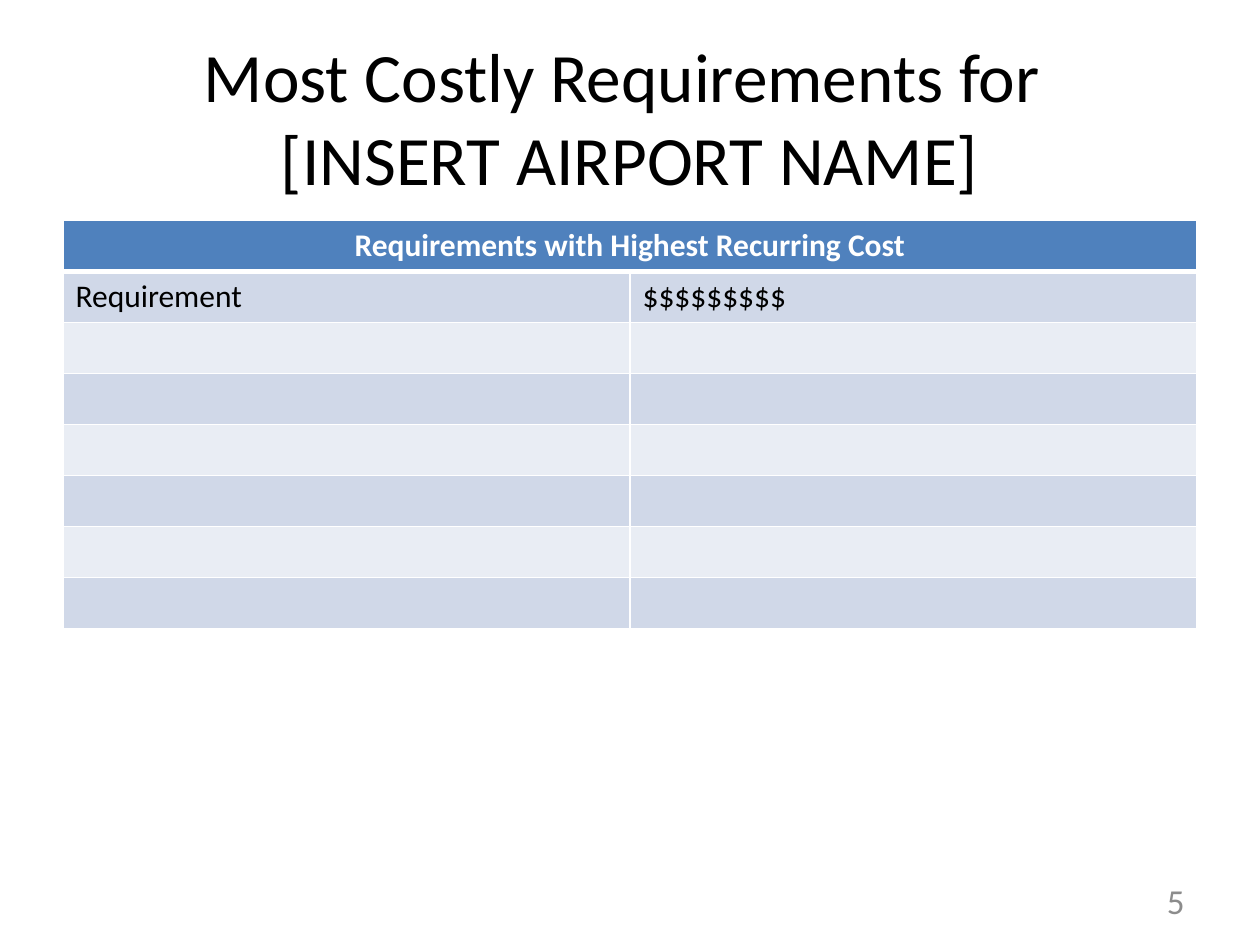
import pptx
import pptx.util
import pptx.dml.color
import pptx.enum.text
import pptx.oxml
import pptx.oxml.ns

TITLE = ["Most Costly Requirements for ", "[INSERT AIRPORT NAME]"]
HEADER = "Requirements with Highest Recurring Cost"
ROWS = [("Requirement", "$$$$$$$$$")] + [("", "")] * 6
PAGE = "5"
FONT = "Calibri"
BANDS = ["D0D8E8", "E9EDF4"]
WIDTH, HEIGHT, MARGIN = 10, 7.5, 0.5
TABLE_TOP, TABLE_HEIGHT = 1.75, 3.24

Inches, Pt = pptx.util.Inches, pptx.util.Pt
ALIGN = pptx.enum.text.PP_ALIGN
MIDDLE = pptx.enum.text.MSO_ANCHOR.MIDDLE


def rgb(color):
    return pptx.dml.color.RGBColor.from_string(color)


def write(tf, lines, size, color, align, bold=False):
    p = tf.paragraphs[0]
    p.alignment = align
    for i, line in enumerate(lines):
        if i:
            p.add_line_break()
        r = p.add_run()
        r.text = line
        r.font.name = FONT
        r.font.size = Pt(size)
        r.font.bold = bold
        r.font.color.rgb = rgb(color)


def add_text(s, box, lines, size, color, align):
    tf = s.shapes.add_textbox(*map(Inches, box)).text_frame
    tf.word_wrap = True
    tf.vertical_anchor = MIDDLE
    write(tf, lines, size, color, align)


def style_cell(cell, fill, bottom=1, top=1):
    tcPr = cell._tc.get_or_add_tcPr()
    for side, width in (("L", 1), ("R", 1), ("T", top), ("B", bottom)):
        tcPr.append(pptx.oxml.parse_xml(
            f'<a:ln{side} {pptx.oxml.ns.nsdecls("a")} w="{Pt(width)}">'
            f'<a:solidFill><a:srgbClr val="FFFFFF"/></a:solidFill></a:ln{side}>'))
    cell.fill.solid()
    cell.fill.fore_color.rgb = rgb(fill)


def add_costs(s):
    n_rows, n_cols = len(ROWS) + 1, len(ROWS[0])
    table = s.shapes.add_table(
        n_rows, n_cols, Inches(MARGIN), Inches(TABLE_TOP),
        Inches(WIDTH - 2 * MARGIN), Inches(TABLE_HEIGHT)).table
    for cell in table.rows[0].cells:
        style_cell(cell, "4F81BD", bottom=3)
    table.cell(0, 0).merge(table.cell(0, n_cols - 1))
    write(table.cell(0, 0).text_frame, [HEADER], 18, "FFFFFF", ALIGN.CENTER, True)
    for i, row in enumerate(ROWS):
        for j, text in enumerate(row):
            cell = table.cell(i + 1, j)
            style_cell(cell, BANDS[i % 2], top=1 if i else 3)
            if text:
                write(cell.text_frame, [text], 18, "000000", ALIGN.LEFT)


def main():
    prs = pptx.Presentation()
    prs.slide_width, prs.slide_height = Inches(WIDTH), Inches(HEIGHT)
    s = prs.slides.add_slide(prs.slide_layouts[6])
    add_text(s, (MARGIN, 0.3, WIDTH - 2 * MARGIN, 1.25), TITLE, 39.6, "000000", ALIGN.CENTER)
    add_costs(s)
    add_text(s, (7.17, 6.95, 2.33, 0.4), [PAGE], 20, "8C8C8C", ALIGN.RIGHT)
    prs.save("out.pptx")


if __name__ == "__main__":
    main()
